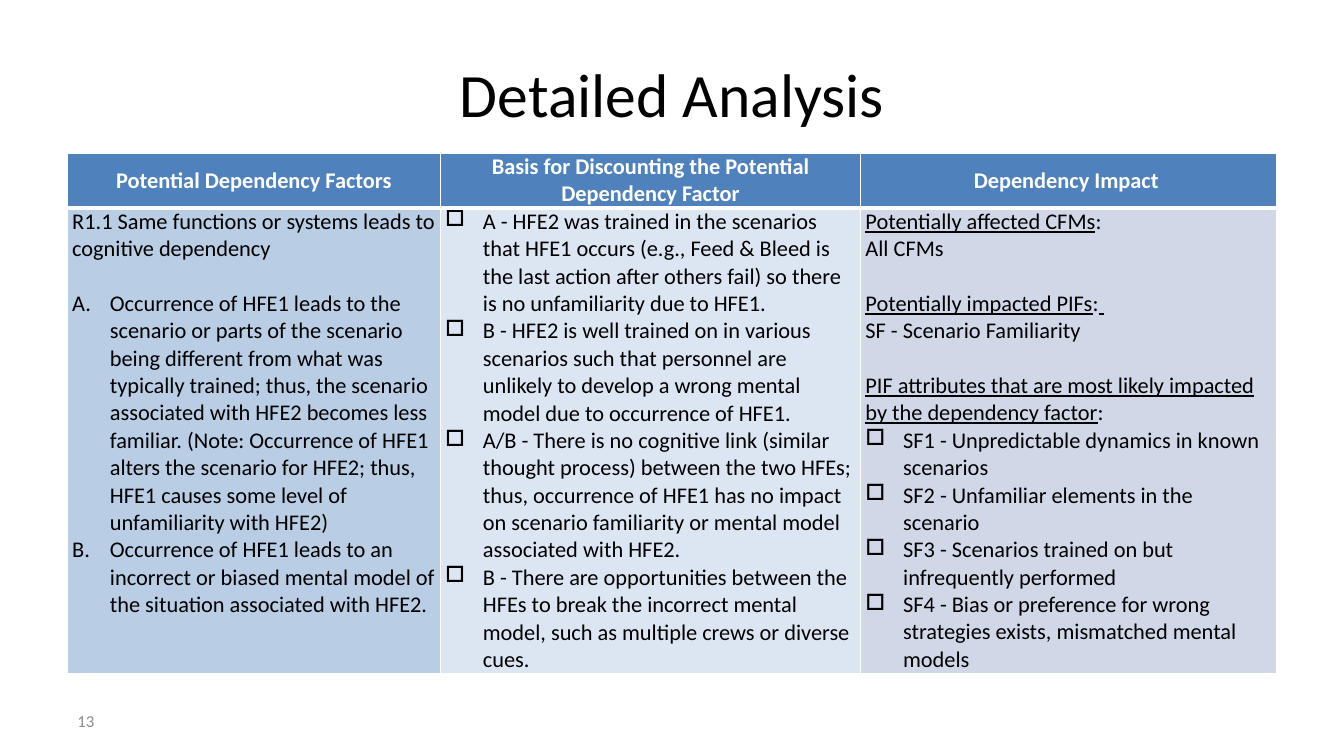
from dataclasses import dataclass
from typing import Any

import pptx
import pptx.dml.color
import pptx.enum.text
import pptx.oxml
import pptx.oxml.ns
import pptx.util
from pptx.util import Cm

FONT = "Calibri"
CENTER = pptx.enum.text.PP_ALIGN.CENTER
LEFT = pptx.enum.text.PP_ALIGN.LEFT
MIDDLE = pptx.enum.text.MSO_ANCHOR.MIDDLE
TOP = pptx.enum.text.MSO_ANCHOR.TOP
LINE_GAP = 19.5
BOX = '<a:buChar {} char="□"/>'
LETTER = '<a:buAutoNum {} type="alphaUcPeriod"/>'


@dataclass
class Entry:
    text: str
    bullet: str = ""
    underlined: str = ""
    tail: str = ""
    gap: float = 0


@dataclass
class Column:
    width: float
    heading: str
    fill: str
    entries: list[Entry]


COLUMNS = [
    Column(9.4, "Potential Dependency Factors", "B9CDE5", [
        Entry("R1.1 Same functions or systems leads to cognitive dependency"),
        Entry("Occurrence of HFE1 leads to the scenario or parts of the scenario being "
              "different from what was typically trained; thus, the scenario associated "
              "with HFE2 becomes less familiar. (Note: Occurrence of HFE1 alters the "
              "scenario for HFE2; thus, HFE1 causes some level of unfamiliarity with HFE2)",
              LETTER, gap=LINE_GAP),
        Entry("Occurrence of HFE1 leads to an incorrect or biased mental model of the "
              "situation associated with HFE2.", LETTER),
    ]),
    Column(10.59, "Basis for Discounting the Potential Dependency Factor", "DCE6F2", [
        Entry("A - HFE2 was trained in the scenarios that HFE1 occurs (e.g., Feed & Bleed "
              "is the last action after others fail) so there is no unfamiliarity due to "
              "HFE1.", BOX),
        Entry("B - HFE2 is well trained on in various scenarios such that personnel are "
              "unlikely to develop a wrong mental model due to occurrence of HFE1.", BOX),
        Entry("A/B - There is no cognitive link (similar thought process) between the two "
              "HFEs; thus, occurrence of HFE1 has no impact on scenario familiarity or "
              "mental model associated with HFE2.", BOX),
        Entry("B - There are opportunities between the HFEs to break the incorrect mental "
              "model, such as multiple crews or diverse cues.", BOX),
    ]),
    Column(10.49, "Dependency Impact ", "D0D8E8", [
        Entry(":", underlined="Potentially affected CFMs"),
        Entry("All CFMs"),
        Entry(":", underlined="Potentially impacted PIFs", tail=" ", gap=LINE_GAP),
        Entry("SF - Scenario Familiarity"),
        Entry(":", underlined="PIF attributes that are most likely impacted by the "
              "dependency factor", gap=LINE_GAP),
        Entry("SF1 - Unpredictable dynamics in known scenarios", BOX),
        Entry("SF2 - Unfamiliar elements in the scenario", BOX),
        Entry("SF3 - Scenarios trained on but infrequently performed", BOX),
        Entry("SF4 - Bias or preference for wrong strategies exists, mismatched mental "
              "models", BOX),
    ]),
]


def color(value: str) -> pptx.dml.color.RGBColor:
    return pptx.dml.color.RGBColor.from_string(value)


def apply(target: Any, values: dict[str, Any]) -> None:
    for name, value in values.items():
        setattr(target, name, value)


def xml(template: str) -> Any:
    return pptx.oxml.parse_xml(template.format(pptx.oxml.ns.nsdecls("a")))


def add_run(paragraph: Any, text: str, size: float, hex_color: str, **formats: Any) -> None:
    run = paragraph.add_run()
    run.text = text
    apply(run.font, {"name": FONT, "size": pptx.util.Pt(size), **formats})
    run.font.color.rgb = color(hex_color)


def add_entry(paragraph: Any, entry: Entry) -> None:
    if entry.bullet:
        properties = paragraph._p.get_or_add_pPr()
        properties.set("marL", str(Cm(0.95)))
        properties.set("indent", str(-Cm(0.95)))
        properties.append(xml(entry.bullet))
    apply(paragraph, {"alignment": LEFT, "space_before": pptx.util.Pt(entry.gap)})
    pieces = [(entry.underlined, True), (entry.text, False), (entry.tail, True)]
    for text, underline in pieces:
        if text:
            add_run(paragraph, text, 16, "000000", bold=False, underline=underline)


def format_cell(cell: Any, fill: str, anchor: Any, top: float, bottom: float) -> None:
    apply(cell, {"margin_left": Cm(0.12), "margin_right": Cm(0.12),
                 "margin_top": 0, "margin_bottom": 0, "vertical_anchor": anchor})
    cell.fill.solid()
    cell.fill.fore_color.rgb = color(fill)
    borders = {"L": 1, "R": 1, "T": top, "B": bottom}
    for position, (side, width) in enumerate(borders.items()):
        border = xml(f'<a:ln{side} {{}} w="{pptx.util.Pt(width)}"><a:solidFill>'
                     f'<a:srgbClr val="FFFFFF"/></a:solidFill></a:ln{side}>')
        cell._tc.get_or_add_tcPr().insert(position, border)


def add_title(slide: Any) -> None:
    title = slide.shapes.title
    apply(title, {"left": Cm(1.7), "top": Cm(0.76), "width": Cm(30.48), "height": Cm(3.18)})
    title.text_frame.vertical_anchor = MIDDLE
    paragraph = title.text_frame.paragraphs[0]
    paragraph.alignment = CENTER
    add_run(paragraph, "Detailed Analysis", 44, "000000")


def add_analysis_table(slide: Any) -> None:
    table = slide.shapes.add_table(2, len(COLUMNS), Cm(1.7), Cm(3.86),
                                   Cm(30.48), Cm(13.06)).table
    for row, height in zip(table.rows, (1.38, 11.68)):
        row.height = Cm(height)
    for index, column in enumerate(COLUMNS):
        table.columns[index].width = Cm(column.width)
        heading, body = table.cell(0, index), table.cell(1, index)
        format_cell(heading, "4F81BD", MIDDLE, 1, 3)
        format_cell(body, column.fill, TOP, 3, 1)
        paragraph = heading.text_frame.paragraphs[0]
        paragraph.alignment = CENTER
        add_run(paragraph, column.heading, 16, "FFFFFF", bold=True)
        for number, entry in enumerate(column.entries):
            frame = body.text_frame
            add_entry(frame.add_paragraph() if number else frame.paragraphs[0], entry)


def add_slide_number(slide: Any) -> None:
    box = slide.shapes.add_textbox(Cm(1.7), Cm(17.65), Cm(7.9), Cm(1.02))
    apply(box.text_frame, {"word_wrap": True, "vertical_anchor": MIDDLE})
    add_run(box.text_frame.paragraphs[0], "13", 12, "8C8C8C")


def main() -> None:
    presentation = pptx.Presentation()
    apply(presentation, {"slide_width": Cm(33.87), "slide_height": Cm(19.05)})
    # Title-only layout
    slide = presentation.slides.add_slide(presentation.slide_layouts[5])
    add_title(slide)
    add_analysis_table(slide)
    add_slide_number(slide)
    presentation.save("out.pptx")


if __name__ == "__main__":
    main()
